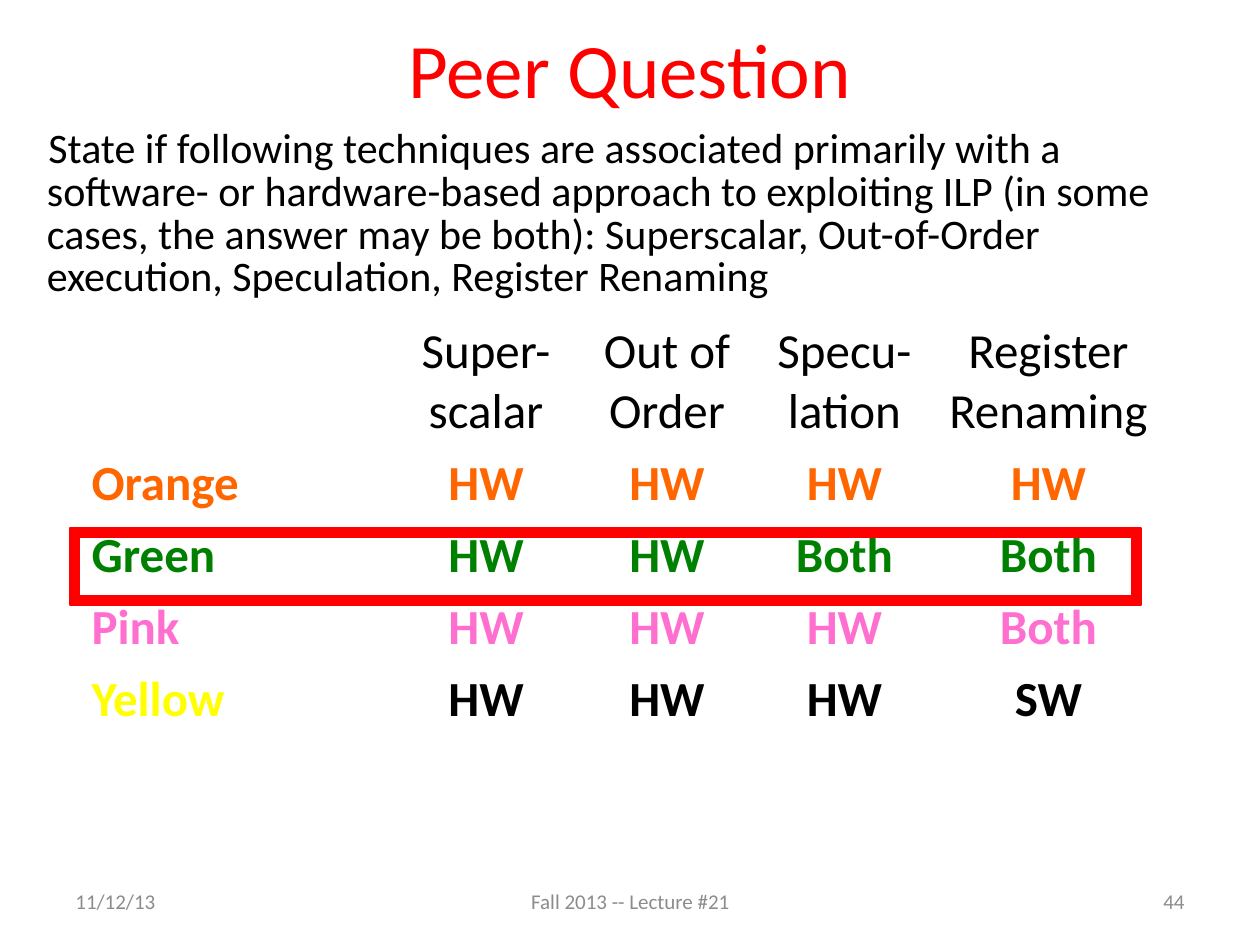
"""Build the Peer Question slide with its answer table."""
import pptx
import pptx.dml.color
import pptx.enum.shapes
import pptx.enum.text
import pptx.oxml
import pptx.oxml.ns
import pptx.util

UNIT = 914400 / 126
HUES = {
    "black": "000000", "red": "FF0000", "gray": "8C8C8C", "orange": "FF6600",
    "green": "008000", "pink": "FF6FCF", "yellow": "FFFF00",
}
ALIGN = pptx.enum.text.PP_ALIGN
MID = pptx.enum.text.MSO_ANCHOR.MIDDLE


def px(*nums):
    return [pptx.util.Emu(round(num * UNIT)) for num in nums]


def write(frame, words, size, hue, align=ALIGN.LEFT, bold=False):
    para = frame.paragraphs[0]
    para.alignment = align
    run = para.add_run()
    run.text = words
    form = {"name": "Calibri", "size": pptx.util.Pt(size), "bold": bold}
    for key, value in form.items():
        setattr(run.font, key, value)
    run.font.color.rgb = pptx.dml.color.RGBColor.from_string(HUES[hue])
    return run


deck = pptx.Presentation()
deck.slide_width, deck.slide_height = px(1260, 945)
slide = deck.slides.add_slide(deck.slide_layouts[5])
shapes = slide.shapes

title = shapes.title
title.left, title.top, title.width, title.height = px(63, 0, 1134, 135)
title.text_frame.vertical_anchor = MID
write(title.text_frame, "Peer Question", 44, "red", ALIGN.CENTER)

body = shapes.add_textbox(*px(30, 125, 1158, 181)).text_frame
side, edge = px(9, 4)
form = {
    "word_wrap": True, "margin_left": side, "margin_right": side,
    "margin_top": edge, "margin_bottom": edge,
    "auto_size": pptx.enum.text.MSO_AUTO_SIZE.SHAPE_TO_FIT_TEXT,
}
for key, value in form.items():
    setattr(body, key, value)
write(body, " State if following techniques are associated primarily with a "
      "software- or hardware-based approach to exploiting ILP (in some cases, "
      "the answer may be both): Superscalar, Out-of-Order execution, "
      "Speculation, Register Renaming", 24, "black")
para = body.paragraphs[0]
para.line_spacing = 0.85
dent = px(8)[0]
props = para._p.get_or_add_pPr()
props.set("marL", str(dent))
props.set("indent", str(-dent))

rows = [
    ("", "Super-scalar", "Out of Order", "Specu-lation", "Register Renaming"),
    ("Orange", "HW", "HW", "HW", "HW"),
    ("Green", "HW", "HW", "Both", "Both"),
    ("Pink", "HW", "HW", "HW", "Both"),
    ("Yellow", "HW", "HW", "HW", "SW"),
]
tints = ["black", "orange", "green", "pink", "black"]
grid = shapes.add_table(5, 5, *px(79, 316, 1087, 422)).table
grid.first_row = grid.horz_banding = False
for col, wide in zip(grid.columns, px(317, 180, 182, 173, 235)):
    col.width = wide
for row, tall in zip(grid.rows, px(132, 72, 72, 72, 72)):
    row.height = tall
for r, (row, tint) in enumerate(zip(rows, tints)):
    for c, words in enumerate(row):
        cell = grid.cell(r, c)
        cell.fill.background()
        if not words:
            continue
        hue = tint if c else words.lower()
        align = ALIGN.CENTER if c else ALIGN.LEFT
        run = write(cell.text_frame, words, 28, hue, align, r > 0)
        if words == "Yellow":
            line = pptx.oxml.parse_xml(
                f'<a:ln {pptx.oxml.ns.nsdecls("a")} w="9525"><a:solidFill>'
                f'<a:srgbClr val="{HUES["black"]}"/></a:solidFill></a:ln>')
            run.font._element.insert(0, line)

feet = [
    (63, 294, "11/12/13", ALIGN.LEFT),
    (903, 294, "44", ALIGN.RIGHT),
    (431, 399, "Fall 2013 -- Lecture #21", ALIGN.CENTER),
]
for left, wide, words, align in feet:
    foot = shapes.add_textbox(*px(left, 876, wide, 50)).text_frame
    foot.word_wrap = True
    foot.vertical_anchor = MID
    write(foot, words, 12, "gray", align)

kind = pptx.enum.shapes.MSO_SHAPE.FRAME
mark = shapes.add_shape(kind, *px(70, 528, 1071, 77))
mark.shadow.inherit = False
red = pptx.dml.color.RGBColor.from_string(HUES["red"])
mark.fill.solid()
mark.fill.fore_color.rgb = red
mark.line.color.rgb = red
mark.line.width = pptx.util.Pt(0.75)

deck.save("out.pptx")
